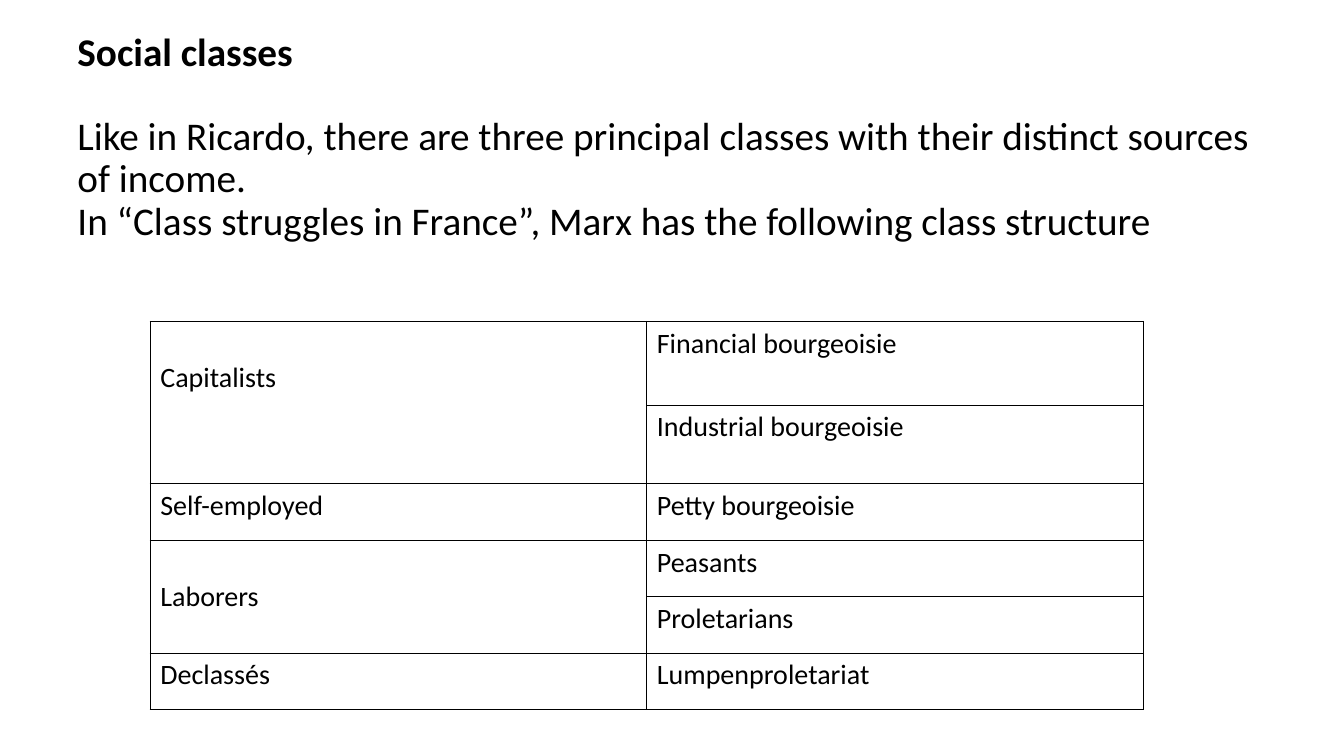
from lxml.etree import SubElement
from pptx import Presentation
from pptx.dml.color import RGBColor
from pptx.enum.text import MSO_ANCHOR
from pptx.oxml.ns import qn
from pptx.util import Inches, Pt

WIDE, HIGH = 13.33, 7.5
INK = {"text": "000000", "line": "000000", "cell": "FFFFFF"}
ROWS = [0.83, 0.78, 0.56, 0.56, 0.56, 0.56]
# text, first row, rows spanned, top margin, anchor
GROUPS = [
    ("Capitalists", 0, 2, 0.39, MSO_ANCHOR.TOP),
    ("Self-employed", 2, 1, 0.05, MSO_ANCHOR.TOP),
    ("Laborers", 3, 2, 0.05, MSO_ANCHOR.MIDDLE),
    ("Declassés", 5, 1, 0.05, MSO_ANCHOR.TOP),
]
STRATA = ["Financial bourgeoisie", "Industrial bourgeoisie", "Petty bourgeoisie",
          "Peasants", "Proletarians", "Lumpenproletariat"]
INTRO = [
    ("Social classes", {"bold": True, "after": 30}),
    ("Like in Ricardo, there are three principal classes with their "
     "distinct sources of income.", {}),
    ("In “Class struggles in France”, Marx has the following class structure", {}),
]


def write(para, text, size=20, bold=False, after=0, pitch=1.0, font="Calibri"):
    para.line_spacing = pitch
    para.space_before, para.space_after = Pt(0), Pt(after)
    run = para.add_run()
    run.text = text
    run.font.name, run.font.size, run.font.bold = font, Pt(size), bold
    run.font.color.rgb = RGBColor.from_string(INK["text"])


def edge(cell):
    """Draw a thin line on all four sides of a cell."""
    props = cell._tc.get_or_add_tcPr()
    for spot, side in enumerate(("a:lnL", "a:lnR", "a:lnT", "a:lnB")):
        line = SubElement(props, qn(side), w=str(Pt(1)))
        fill = SubElement(line, qn("a:solidFill"))
        SubElement(fill, qn("a:srgbClr"), val=INK["line"])
        props.insert(spot, line)


class Deck:
    def __init__(self):
        self.show = Presentation()
        self.show.slide_width, self.show.slide_height = Inches(WIDE), Inches(HIGH)
        self.slide = self.show.slides.add_slide(self.show.slide_layouts[6])

    def place(self, left, top, width, height):
        """Turn shares of the slide's size into lengths."""
        return (Inches(left * WIDE), Inches(top * HIGH),
                Inches(width * WIDE), Inches(height * HIGH))

    def text(self, box, lines):
        frame = self.slide.shapes.add_textbox(*self.place(*box)).text_frame
        frame.word_wrap = True
        frame.vertical_anchor = MSO_ANCHOR.MIDDLE
        for spot, (line, style) in enumerate(lines):
            para = frame.add_paragraph() if spot else frame.paragraphs[0]
            write(para, line, size=28, pitch=0.9, **style)

    def table(self, box):
        table = self.slide.shapes.add_table(len(ROWS), 2, *self.place(*box)).table
        table.first_row = table.horz_banding = False
        for row, high in zip(table.rows, ROWS):
            row.height = Inches(high)
        for cell in table.iter_cells():
            cell.fill.solid()
            cell.fill.fore_color.rgb = RGBColor.from_string(INK["cell"])
            edge(cell)
        for name, first, span, top, anchor in GROUPS:
            cell = table.cell(first, 0)
            if span > 1:
                cell.merge(table.cell(first + span - 1, 0))
            cell.margin_top, cell.vertical_anchor = Inches(top), anchor
            write(cell.text_frame.paragraphs[0], name)
        for spot, name in enumerate(STRATA):
            write(table.cell(spot, 1).text_frame.paragraphs[0], name)


def main():
    deck = Deck()
    deck.table((1.49 / WIDE, 3.19 / HIGH, 9.85 / WIDE, sum(ROWS) / HIGH))
    deck.text((0.67 / WIDE, 0.26 / HIGH, 11.86 / WIDE, 2.22 / HIGH), INTRO)
    deck.show.save("out.pptx")


if __name__ == "__main__":
    main()
